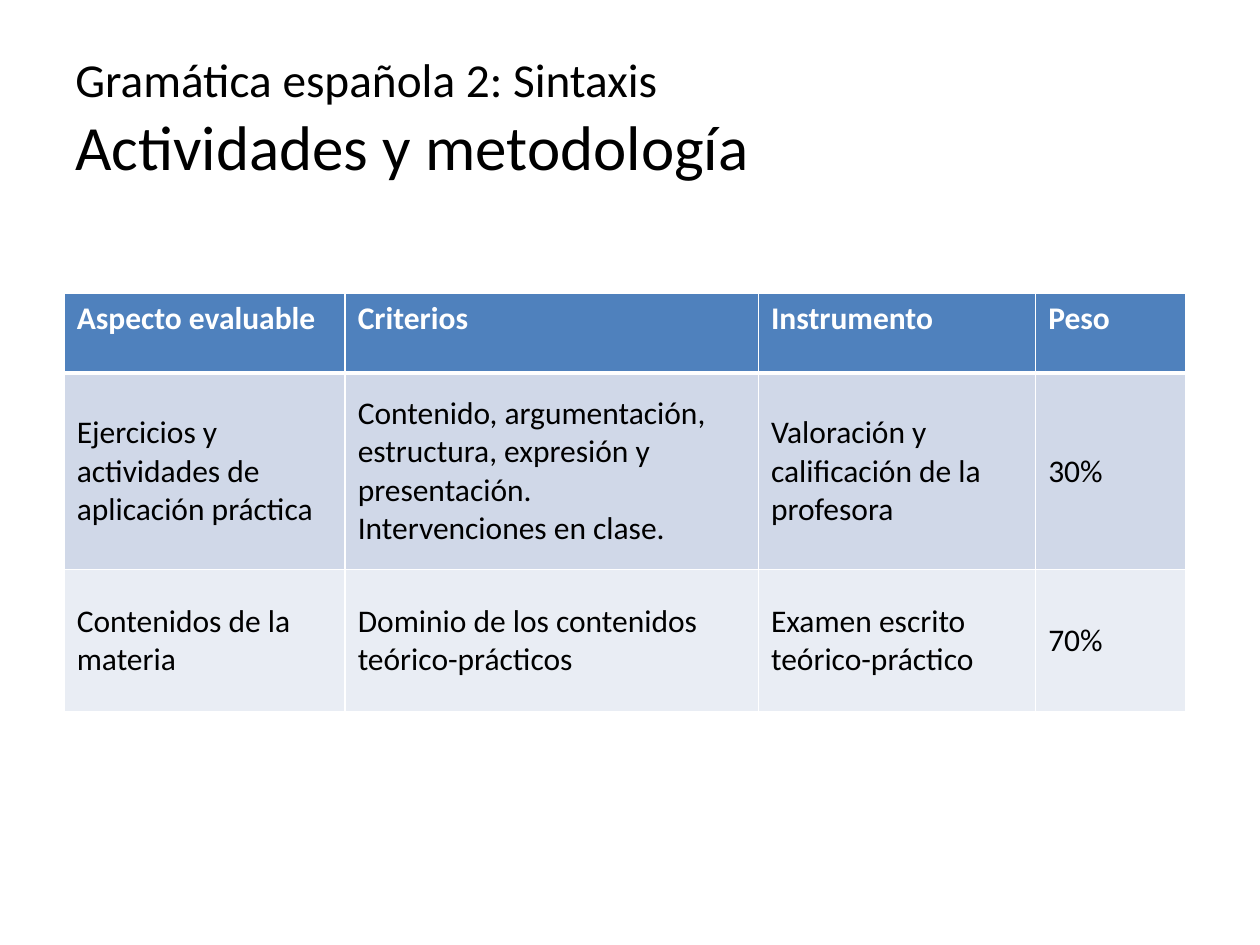
"""Build the assessment slide for the Spanish syntax course."""
from dataclasses import dataclass

from lxml.etree import fromstring
from pptx import Presentation
from pptx.dml.color import RGBColor
from pptx.enum.text import MSO_ANCHOR
from pptx.oxml.ns import nsdecls
from pptx.util import Inches, Pt

FONT = "Calibri"
COLORS = {
    "heading": "4F81BD",
    "practice": "D0D8E8",
    "contents": "E9EDF4",
    "white": "FFFFFF",
    "black": "000000",
}
COLUMN_WIDTHS = (2.23, 3.28, 2.2, 1.19)


@dataclass(frozen=True)
class AssessmentRow:
    height: float
    fill: str
    texts: tuple[str, ...]
    text_color: str = "black"
    bold: bool = False
    anchor: MSO_ANCHOR = MSO_ANCHOR.MIDDLE
    top_border: int = 1
    bottom_border: int = 1


ROWS = (
    AssessmentRow(
        0.63, "heading",
        ("Aspecto evaluable", "Criterios", "Instrumento", "Peso"),
        text_color="white", bold=True, anchor=MSO_ANCHOR.TOP, bottom_border=3,
    ),
    AssessmentRow(
        1.56, "practice",
        (
            "Ejercicios y actividades de aplicación práctica",
            "Contenido, argumentación, estructura, expresión y presentación.\n"
            "Intervenciones en clase.",
            "Valoración y calificación de la profesora",
            "30%",
        ),
        top_border=3,
    ),
    AssessmentRow(
        1.13, "contents",
        (
            "Contenidos de la materia",
            "Dominio de los contenidos teórico-prácticos",
            "Examen escrito teórico-práctico",
            "70%",
        ),
    ),
)


def rgb(name: str) -> RGBColor:
    return RGBColor.from_string(COLORS[name])


def add_title(slide) -> None:
    title = slide.shapes.add_textbox(Inches(0.5), Inches(0.3), Inches(9), Inches(1.25))
    frame = title.text_frame
    frame.word_wrap = True
    frame.vertical_anchor = MSO_ANCHOR.MIDDLE
    paragraph = frame.paragraphs[0]
    paragraph.font.name = FONT
    paragraph.font.color.rgb = rgb("black")
    course = paragraph.add_run()
    course.text = "Gramática española 2: Sintaxis"
    course.font.size = Pt(27)
    paragraph.add_line_break()
    topic = paragraph.add_run()
    topic.text = "Actividades y metodología"
    topic.font.size = Pt(36)


def set_borders(cell, row: AssessmentRow) -> None:
    properties = cell._tc.get_or_add_tcPr()
    widths = {"L": 1, "R": 1, "T": row.top_border, "B": row.bottom_border}
    for position, (side, width) in enumerate(widths.items()):
        border = fromstring(
            f'<a:ln{side} {nsdecls("a")} w="{Pt(width)}"><a:solidFill>'
            f'<a:srgbClr val="{COLORS["white"]}"/></a:solidFill></a:ln{side}>'
        )
        properties.insert(position, border)


def fill_cell(cell, text: str, row: AssessmentRow) -> None:
    cell.fill.solid()
    cell.fill.fore_color.rgb = rgb(row.fill)
    cell.vertical_anchor = row.anchor
    cell.text = text
    for paragraph in cell.text_frame.paragraphs:
        paragraph.font.name = FONT
        paragraph.font.size = Pt(18)
        paragraph.font.bold = row.bold
        paragraph.font.color.rgb = rgb(row.text_color)
    set_borders(cell, row)


def add_assessment_table(slide) -> None:
    table = slide.shapes.add_table(
        len(ROWS), len(COLUMN_WIDTHS), Inches(0.51), Inches(2.33),
        Inches(sum(COLUMN_WIDTHS)), Inches(sum(row.height for row in ROWS)),
    ).table
    for column, width in zip(table.columns, COLUMN_WIDTHS):
        column.width = Inches(width)
    for table_row, row in zip(table.rows, ROWS):
        table_row.height = Inches(row.height)
        for cell, text in zip(table_row.cells, row.texts):
            fill_cell(cell, text, row)


def main() -> None:
    presentation = Presentation()
    presentation.slide_width = Inches(10)
    presentation.slide_height = Inches(7.5)
    slide = presentation.slides.add_slide(presentation.slide_layouts[6])
    add_title(slide)
    add_assessment_table(slide)
    presentation.save("out.pptx")


if __name__ == "__main__":
    main()
